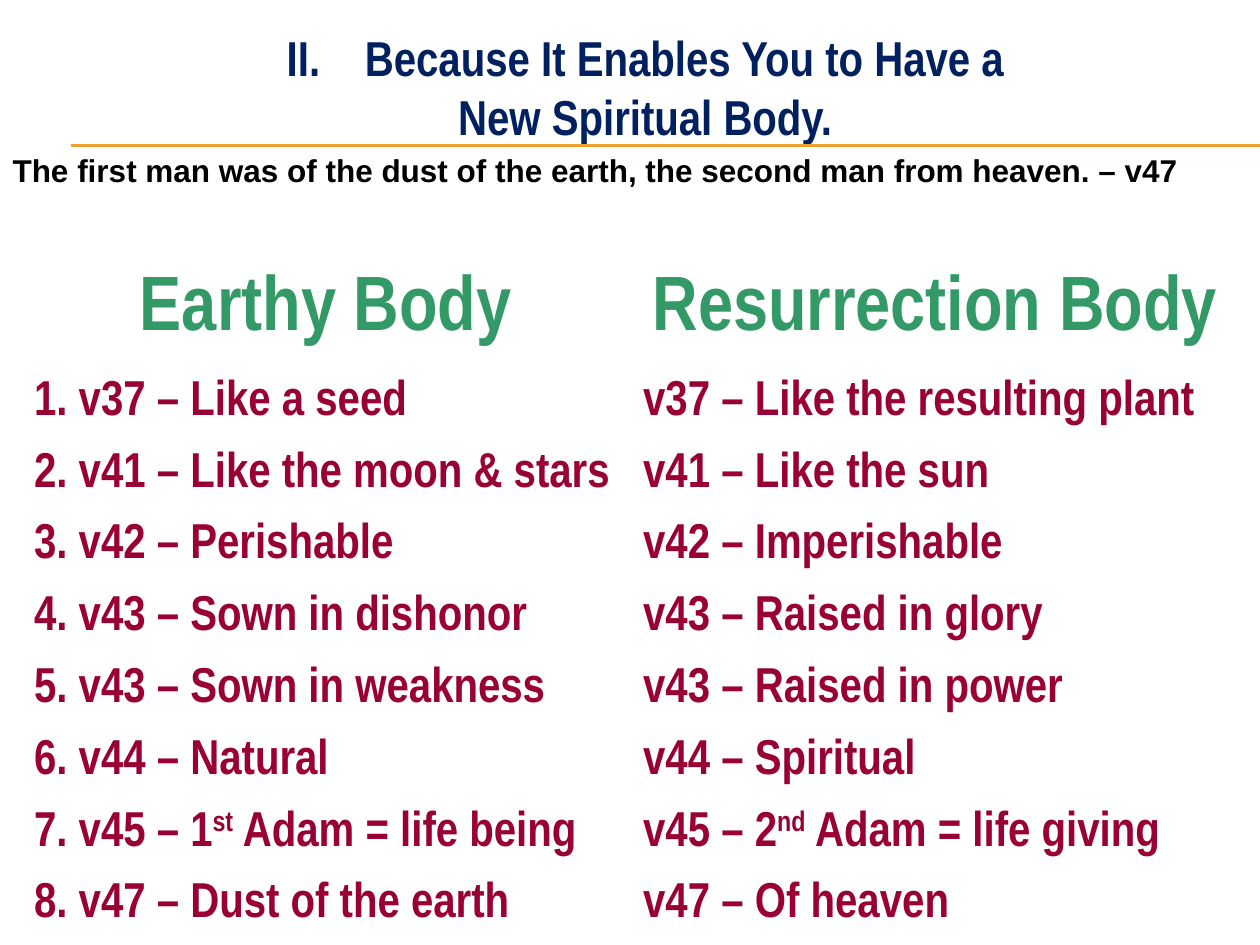
from lxml.etree import SubElement
from pptx import Presentation
from pptx.dml.color import RGBColor
from pptx.enum.shapes import MSO_CONNECTOR
from pptx.enum.text import MSO_ANCHOR, MSO_AUTO_SIZE, PP_ALIGN
from pptx.oxml.ns import qn
from pptx.util import Inches, Pt

NAVY = RGBColor(0x00, 0x20, 0x60)
GOLD = RGBColor(0xF0, 0xA2, 0x2E)
GREEN = RGBColor(0x33, 0x99, 0x66)
WINE = RGBColor(0x99, 0x00, 0x33)
BLACK = RGBColor(0x00, 0x00, 0x00)
NARROW = "Arial Narrow"

TITLE = ["Because It Enables You to Have a", "New Spiritual Body."]
VERSE = ("The first man was of the dust of the earth, "
         "the second man from heaven. – v47")
HEADS = ("Earthy Body", "Resurrection Body")
# A tuple holds runs; every second run is raised.
PAIRS = [
    ("1. v37 – Like a seed", "v37 – Like the resulting plant"),
    ("2. v41 – Like the moon & stars", "v41 – Like the sun"),
    ("3. v42 – Perishable", "v42 – Imperishable"),
    ("4. v43 – Sown in dishonor", "v43 – Raised in glory"),
    ("5. v43 – Sown in weakness", "v43 – Raised in power"),
    ("6. v44 – Natural", "v44 – Spiritual"),
    (("7. v45 – 1", "st", " Adam = life being"),
     ("v45 – 2", "nd", " Adam = life giving")),
    ("8. v47 – Dust of the earth", "v47 – Of heaven"),
]


def write(para, text, size, color, face=NARROW, align=PP_ALIGN.LEFT):
    para.alignment = align
    parts = (text,) if isinstance(text, str) else text
    for i, part in enumerate(parts):
        run = para.add_run()
        run.text = part
        font = run.font
        font.name, font.size, font.bold = face, Pt(size), True
        font.color.rgb = color
        if i % 2:
            run._r.get_or_add_rPr().set("baseline", "30000")


def add_grid(slide, rows, cols, left, top, width, heights):
    grid = slide.shapes.add_table(
        rows, cols, Inches(left), Inches(top),
        Inches(width), Inches(sum(heights))).table
    grid.first_row = grid.horz_banding = False
    for row, high in zip(grid.rows, heights):
        row.height = Inches(high)
    for cell in grid.iter_cells():
        cell.fill.background()
    return grid


def add_rule(slide, y):
    rule = slide.shapes.add_connector(
        MSO_CONNECTOR.STRAIGHT, Inches(0.56), Inches(y), Inches(10), Inches(y))
    rule.line.color.rgb = GOLD
    rule.line.width = Pt(0.75)
    SubElement(rule._element.spPr, qn("a:effectLst"))


def add_title(slide):
    title = slide.shapes.title
    title.left, title.top = Inches(0.83), Inches(0.17)
    title.width, title.height = Inches(8.58), Inches(1.04)
    frame = title.text_frame
    frame.word_wrap = True
    frame.auto_size = MSO_AUTO_SIZE.SHAPE_TO_FIT_TEXT
    frame.vertical_anchor = MSO_ANCHOR.TOP
    for i, line in enumerate(TITLE):
        para = frame.add_paragraph() if i else frame.paragraphs[0]
        props = para._p.get_or_add_pPr()
        props.set("marL", str(Inches(0.62)))
        props.set("indent", str(-Inches(0.62)))
        if i:
            SubElement(props, qn("a:buNone"))
        else:
            SubElement(props, qn("a:buFont"), typeface="+mj-lt")
            SubElement(props, qn("a:buAutoNum"),
                       type="romanUcPeriod", startAt="2")
        write(para, line, 28, NAVY, align=PP_ALIGN.CENTER)


def main():
    deck = Presentation()
    deck.slide_width, deck.slide_height = Inches(10), Inches(7.5)
    slide = deck.slides.add_slide(deck.slide_layouts[5])

    for y in (1.15, 1.16):
        add_rule(slide, y)

    heights = [0.83] + [0.57] * len(PAIRS)
    grid = add_grid(slide, len(heights), 2, 0.17, 2.13, 9.67, heights)
    for r, pair in enumerate([HEADS] + PAIRS):
        for c, text in enumerate(pair):
            para = grid.cell(r, c).text_frame.paragraphs[0]
            if r:
                write(para, text, 28, WINE)
            else:
                write(para, text, 44, GREEN, align=PP_ALIGN.CENTER)

    add_title(slide)

    verse = add_grid(slide, 1, 1, 0, 1.17, 10, [0.41])
    write(verse.cell(0, 0).text_frame.paragraphs[0], VERSE, 18, BLACK,
          "Arial", PP_ALIGN.JUSTIFY)
    deck.save("out.pptx")


if __name__ == "__main__":
    main()
